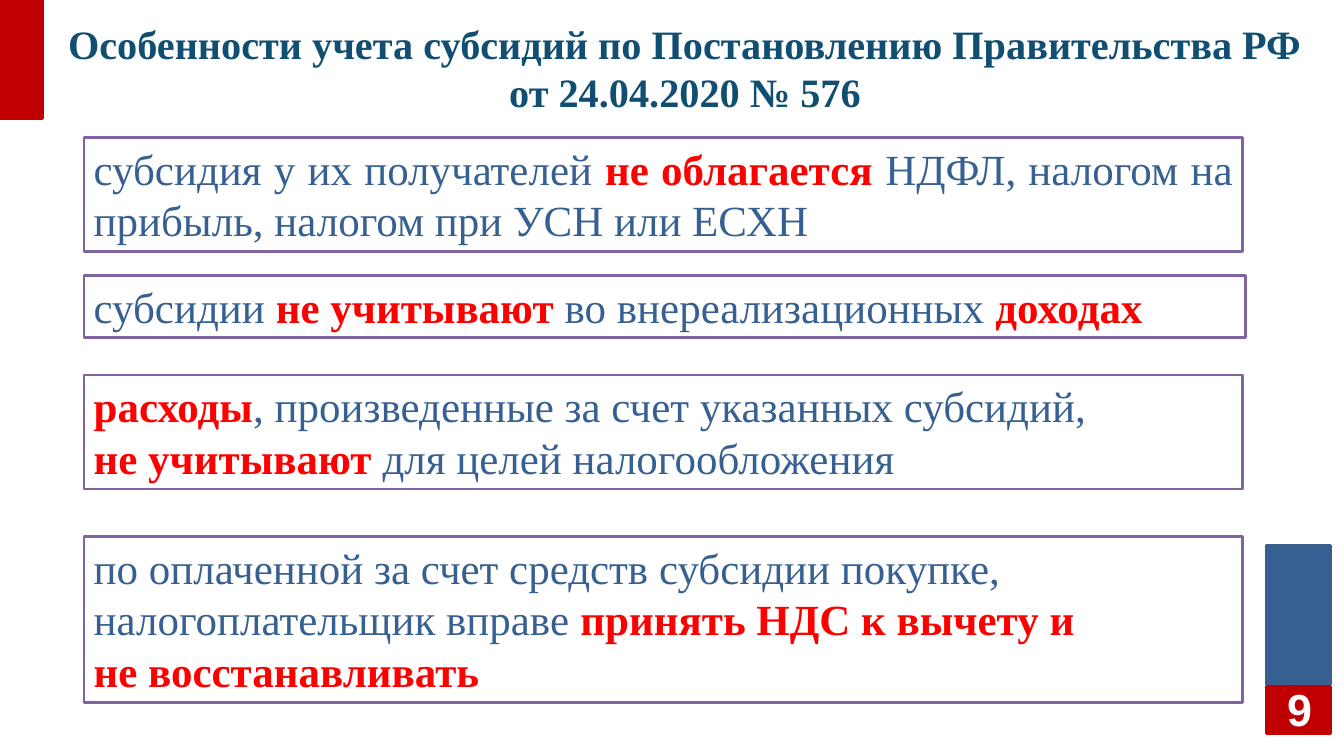
from pptx import Presentation
from pptx.dml.color import RGBColor
from pptx.enum.shapes import MSO_SHAPE
from pptx.enum.text import MSO_ANCHOR, PP_ALIGN
from pptx.util import Inches, Pt

HUES = {"blue": "376092", "edge": "3A5F8C", "red": "C00000", "bright": "FF0000",
        "title": "104E72", "frame": "8064A2", "white": "FFFFFF"}
SERIF = "Times New Roman"

# Each note: top, width, height, alignment, paragraphs of (text, is key)
NOTES = [
    (1.42, 11.98, 1.18, PP_ALIGN.JUSTIFY, [
        [("субсидия у их получателей ", False), ("не облагается ", True),
         ("НДФЛ, налогом на прибыль, налогом при УСН или ЕСХН", False)]]),
    (2.85, 12.01, 0.64, PP_ALIGN.JUSTIFY, [
        [("субсидии ", False), ("не учитывают ", True),
         ("во внереализационных ", False), ("доходах", True)]]),
    (3.88, 11.98, 1.18, PP_ALIGN.JUSTIFY, [
        [("расходы", True), (", произведенные за счет указанных субсидий,", False)],
        [("не учитывают ", True), ("для целей налогообложения", False)]]),
    (5.55, 11.98, 1.72, PP_ALIGN.LEFT, [
        [("по оплаченной за счет средств субсидии покупке, "
          "налогоплательщик вправе ", False), ("принять НДС к вычету и", True)],
        [("не восстанавливать", True)]]),
]


def tint(name):
    return RGBColor.from_string(HUES[name])


def add_run(para, text, size=32, font=SERIF, hue="blue", bold=False):
    run = para.add_run()
    run.text = text
    run.font.size = Pt(size)
    run.font.name = font
    run.font.bold = bold
    run.font.color.rgb = tint(hue)


def add_rect(slide, box, fill, line):
    rect = slide.shapes.add_shape(MSO_SHAPE.RECTANGLE, *map(Inches, box))
    rect.shadow.inherit = False
    rect.fill.solid()
    rect.fill.fore_color.rgb = tint(fill)
    rect.line.color.rgb = tint(line)
    rect.line.width = Pt(2)
    return rect


def add_label(slide, box, text, **style):
    frame = slide.shapes.add_textbox(*map(Inches, box)).text_frame
    frame.word_wrap = True
    frame.vertical_anchor = MSO_ANCHOR.MIDDLE
    frame.margin_left = frame.margin_right = 0
    para = frame.paragraphs[0]
    para.alignment = PP_ALIGN.CENTER
    add_run(para, text, **style)


def add_note(slide, box, align, paras):
    frame = add_rect(slide, box, "white", "frame").text_frame
    frame.word_wrap = True
    frame.vertical_anchor = MSO_ANCHOR.TOP
    for i, parts in enumerate(paras):
        para = frame.add_paragraph() if i else frame.paragraphs[0]
        para.alignment = align
        for text, key in parts:
            add_run(para, text, hue="bright" if key else "blue", bold=key)


def add_head(slide, left, top, width, height):
    add_rect(slide, (left, top, 0.44, height), "red", "red")
    add_label(slide, (left + 0.61, top + 0.18, width - 0.95, 1.04),
              "Особенности учета субсидий по Постановлению Правительства РФ "
              "от 24.04.2020 № 576", size=30, hue="title", bold=True)


def add_notes(slide, left):
    for top, width, height, align, paras in NOTES:
        add_note(slide, (left, top, width, height), align, paras)


def add_page(slide, left, top, width):
    add_rect(slide, (left, top, width, 1.44), "blue", "edge")
    add_rect(slide, (left, top + 1.46, width, 0.49), "red", "red")
    add_label(slide, (left - 0.02, top + 1.48, width + 0.06, 0.42), "9",
              size=33.4, font="Arial", hue="white", bold=True)


def main():
    deck = Presentation()
    deck.slide_width, deck.slide_height = Inches(13.9), Inches(7.82)
    slide = deck.slides.add_slide(deck.slide_layouts[6])
    add_page(slide, 13.1, 5.64, 0.66)
    add_head(slide, 0, 0, 13.9, 1.23)
    add_notes(slide, 0.87)
    deck.save("out.pptx")


if __name__ == "__main__":
    main()
